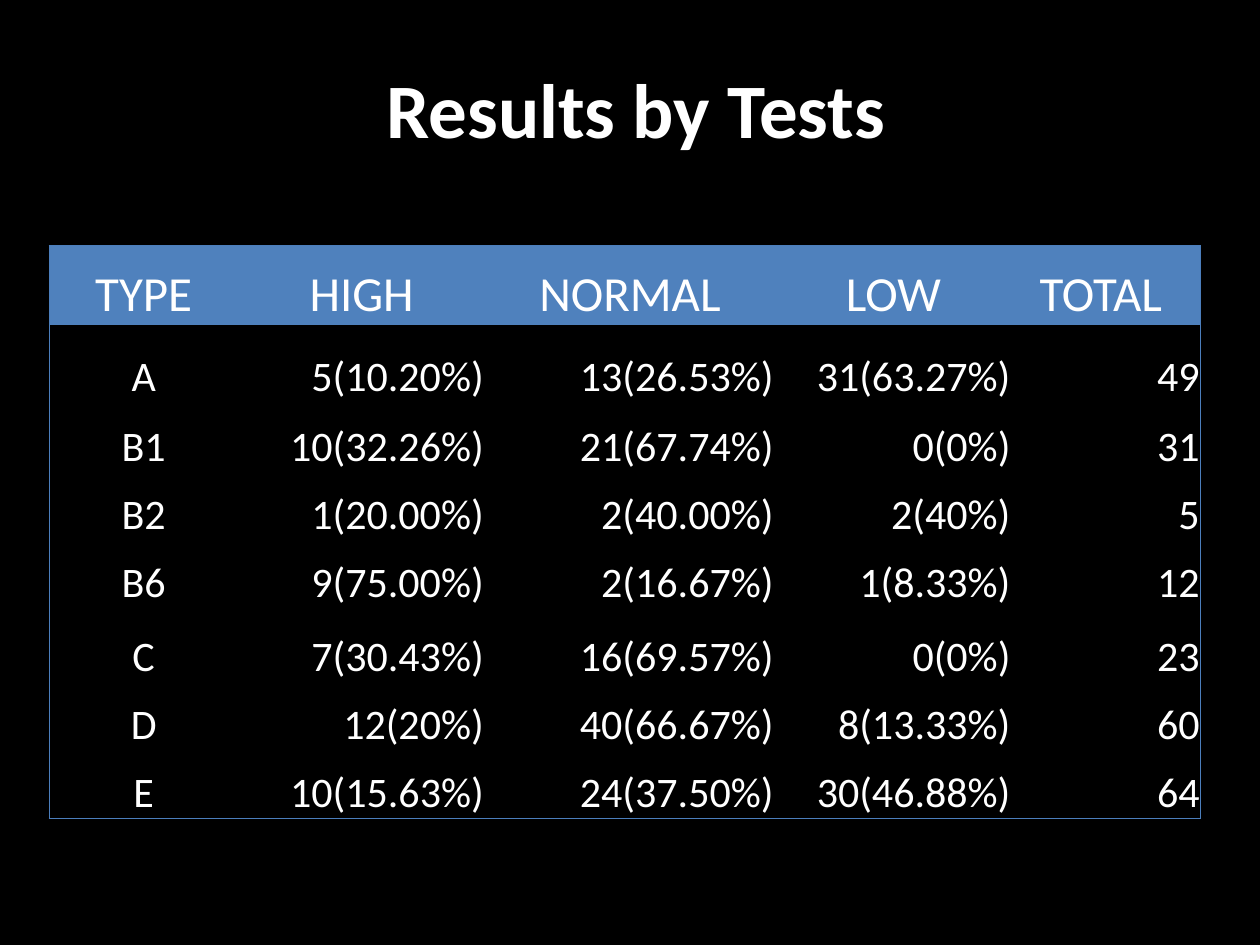
from lxml import etree
from pptx import Presentation
from pptx.dml.color import RGBColor
from pptx.enum.text import MSO_ANCHOR, PP_ALIGN
from pptx.oxml.ns import qn
from pptx.util import Inches, Pt

CENTER, RIGHT = PP_ALIGN.CENTER, PP_ALIGN.RIGHT
MIDDLE, BOTTOM = MSO_ANCHOR.MIDDLE, MSO_ANCHOR.BOTTOM
TITLE_ONLY = 5
NO_STYLE_NO_GRID = "{2D5ABB26-0587-4C30-8999-92F81FD0307C}"
BLACK, WHITE, HEADER_BLUE, BORDER_BLUE = "000000", "FFFFFF", "4F81BD", "4B7EBC"


def color(value):
    return RGBColor.from_string(value)


def format_text(paragraph, size, align, bold=False):
    paragraph.alignment = align
    for run in paragraph.runs:
        run.font.name = "Calibri"
        run.font.size = Pt(size)
        run.font.bold = bold
        run.font.color.rgb = color(WHITE)


prs = Presentation()
prs.slide_width, prs.slide_height = Inches(10), Inches(7.5)
slide = prs.slides.add_slide(prs.slide_layouts[TITLE_ONLY])
slide.background.fill.solid()
slide.background.fill.fore_color.rgb = color(BLACK)

title = slide.shapes.title
title.left, title.top = Inches(0.55), Inches(0.23)
title.width, title.height = Inches(9), Inches(1.25)
title.text_frame.text = "Results by Tests"
title.text_frame.vertical_anchor = MIDDLE
format_text(title.text_frame.paragraphs[0], 44, CENTER, bold=True)

results = [
    ["TYPE", "HIGH", "NORMAL", "LOW", "TOTAL "],
    ["A", "5(10.20%)", "13(26.53%)", "31(63.27%)", "49"],
    ["B1", "10(32.26%)", "21(67.74%)", "0(0%)", "31"],
    ["B2", "1(20.00%)", "2(40.00%)", "2(40%)", "5"],
    ["B6", "9(75.00%)", "2(16.67%)", "1(8.33%)", "12"],
    ["C", "7(30.43%)", "16(69.57%)", "0(0%)", "23"],
    ["D", "12(20%)", "40(66.67%)", "8(13.33%)", "60"],
    ["E", "10(15.63%)", "24(37.50%)", "30(46.88%)", "64"],
]
column_widths = [1.5, 1.96, 2.3, 1.88, 1.5]
row_heights = [0.63, 0.62, 0.55, 0.54, 0.54, 0.59, 0.54, 0.54]
last_row, last_column = len(results) - 1, len(column_widths) - 1

table = slide.shapes.add_table(
    len(results), len(column_widths), Inches(0.39), Inches(1.95),
    Inches(sum(column_widths)), Inches(sum(row_heights))).table
table.horz_banding = False
table._tbl.tblPr.find(qn("a:tableStyleId")).text = NO_STYLE_NO_GRID
for column, width in zip(table.columns, column_widths):
    column.width = Inches(width)
for row, height in zip(table.rows, row_heights):
    row.height = Inches(height)

for r, values in enumerate(results):
    for c, value in enumerate(values):
        cell = table.cell(r, c)
        cell.margin_left = cell.margin_right = cell.margin_top = Inches(0.01)
        cell.margin_bottom = 0
        cell.vertical_anchor = BOTTOM
        cell.text_frame.text = value
        is_header = r == 0
        format_text(cell.text_frame.paragraphs[0], 28 if is_header else 24,
                    CENTER if is_header or c == 0 else RIGHT)

        outer_edges = {"a:lnL": c == 0, "a:lnR": c == last_column,
                       "a:lnT": r == 0, "a:lnB": r == last_row}
        for edge, is_outer in outer_edges.items():
            if is_outer:
                border = etree.SubElement(cell._tc.get_or_add_tcPr(), qn(edge), w=str(Pt(0.75)))
                border_fill = etree.SubElement(border, qn("a:solidFill"))
                etree.SubElement(border_fill, qn("a:srgbClr"), val=BORDER_BLUE)

        if is_header:
            cell.fill.solid()
            cell.fill.fore_color.rgb = color(HEADER_BLUE)
        else:
            cell.fill.background()

prs.save("out.pptx")
